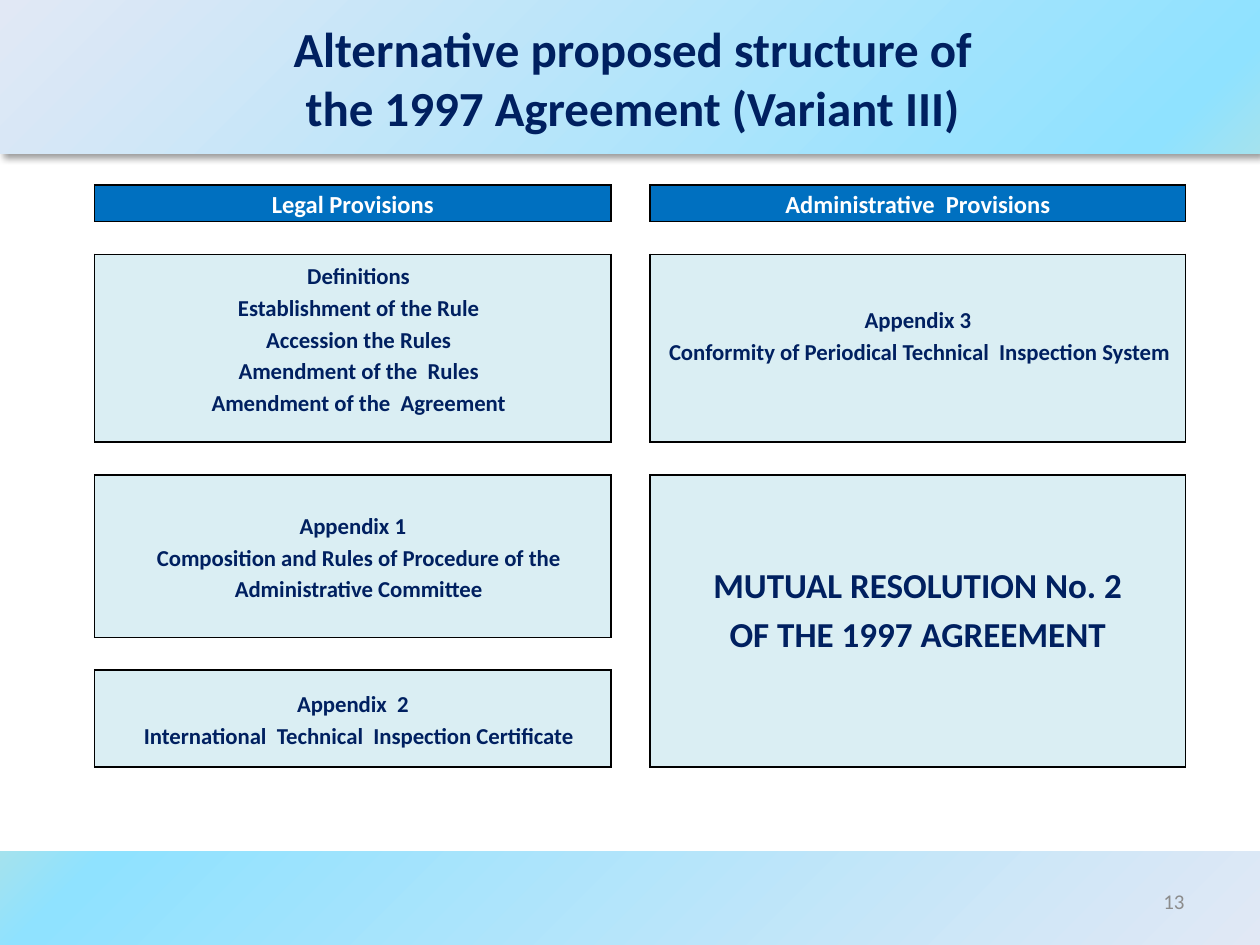
from lxml.etree import SubElement
from pptx import Presentation
from pptx.dml.color import RGBColor
from pptx.enum.shapes import MSO_SHAPE
from pptx.enum.text import MSO_ANCHOR, MSO_AUTO_SIZE, PP_ALIGN
from pptx.oxml import parse_xml
from pptx.oxml.ns import nsdecls, qn
from pptx.util import Emu, Pt

PX = 9144  # 100 px to the inch
NAVY = RGBColor(0x00, 0x20, 0x60)
BLUE = RGBColor(0x00, 0x70, 0xC0)
PALE = RGBColor(0xDA, 0xEE, 0xF3)
WHITE = RGBColor(0xFF, 0xFF, 0xFF)
BLACK = RGBColor(0x00, 0x00, 0x00)
GREY = RGBColor(0x8C, 0x8C, 0x8C)
BAND_STOPS = [(0, RGBColor(0xA4, 0xE2, 0xEE)), (8, RGBColor(0x8F, 0xE2, 0xFF)),
              (100, RGBColor(0xE1, 0xE8, 0xF5))]
NO_STYLE = "{2D5ABB26-0587-4C30-8999-92F81FD0307C}"

COLUMNS = [410, 31, 425]
ROWS = [29, 26, 149, 26, 129, 26, 77, 26]
# row, column, rows spanned, lines, (left margin, indent) after line 1, format
CELLS = [
    (0, 0, 1, ["Legal Provisions"], (0, 0),
     dict(size=14, color=WHITE, fill=BLUE, anchor=MSO_ANCHOR.TOP)),
    (0, 2, 1, ["Administrative  Provisions"], (0, 0),
     dict(size=14, color=WHITE, fill=BLUE, anchor=MSO_ANCHOR.TOP)),
    (2, 0, 1, ["Definitions", "Establishment of the Rule", "Accession the Rules",
               "Amendment of the  Rules", "Amendment of the  Agreement"], (0, 9),
     dict(bottom=16, first=(0, 9))),
    (2, 2, 1, ["Appendix 3", "Conformity of Periodical Technical  Inspection System"],
     (0, 9), dict(bottom=22, rest_align=PP_ALIGN.LEFT)),
    (4, 0, 1, ["Appendix 1", "Composition and Rules of Procedure of the "
               "Administrative Committee"], (9, 0), {}),
    (4, 2, 3, ["MUTUAL RESOLUTION No. 2", "OF THE 1997 AGREEMENT"], (0, 0),
     dict(size=20, bottom=21)),
    (6, 0, 1, ["Appendix  2", "International  Technical  Inspection Certificate"],
     (0, 9), {}),
]


def px(*values):
    return [Emu(v * PX) for v in values]


def write(p, text, size=13, color=NAVY, bold=True, align=PP_ALIGN.CENTER,
          spacing=None, indent=(0, 0)):
    p.alignment = align
    p.line_spacing = spacing
    pPr = p._p.get_or_add_pPr()
    pPr.set("marL", str(indent[0] * PX))
    pPr.set("indent", str(indent[1] * PX))
    p.text = text
    for r in p.runs:
        r.font.name, r.font.size, r.font.bold = "Calibri", Pt(size), bold
        r.font.color.rgb = color


def add_band(s, box, focus, shadow=False):
    """Radial gradient band, whose centre is the corner given by focus."""
    sp = s.shapes.add_shape(MSO_SHAPE.RECTANGLE, *px(*box))
    sp.shadow.inherit = False
    sp.line.fill.background()
    stops = "".join(f'<a:gs pos="{pos * 1000}"><a:srgbClr val="{c}"/></a:gs>'
                    for pos, c in BAND_STOPS)
    rect = " ".join(f'{side}="100000"' for side in focus)
    spPr = sp._element.spPr
    spPr.find(qn("a:prstGeom")).addnext(parse_xml(
        f'<a:gradFill {nsdecls("a")} rotWithShape="1"><a:gsLst>{stops}</a:gsLst>'
        f'<a:path path="circle"><a:fillToRect {rect}/></a:path></a:gradFill>'))
    if shadow:
        spPr.find(qn("a:effectLst")).append(parse_xml(
            f'<a:outerShdw {nsdecls("a")} blurRad="{Pt(4)}" dist="{Pt(3)}" '
            f'dir="2700000" algn="tl" rotWithShape="0"><a:srgbClr val="{BLACK}">'
            '<a:alpha val="40000"/></a:srgbClr></a:outerShdw>'))


def add_title(s, box, lines):
    title = s.shapes.title
    s.shapes._spTree.append(title._element)  # in front of the bands
    title.left, title.top, title.width, title.height = px(*box)
    tf = title.text_frame
    tf.auto_size, tf.word_wrap = MSO_AUTO_SIZE.NONE, True
    tf.vertical_anchor = MSO_ANCHOR.MIDDLE
    tf.margin_right, = px(24)
    write(tf.paragraphs[0], "\v".join(lines), size=28)


def set_borders(cell):
    tcPr = cell._tc.get_or_add_tcPr()
    for side in "LRTB":
        tcPr.append(parse_xml(
            f'<a:ln{side} {nsdecls("a")} w="{Pt(1)}"><a:solidFill>'
            f'<a:srgbClr val="{BLACK}"/></a:solidFill></a:ln{side}>'))


def clear_cell(cell):
    cell.margin_left = cell.margin_right = cell.margin_top = cell.margin_bottom = 0
    # small mark, so that the gap rows keep their height
    SubElement(cell.text_frame.paragraphs[0]._p, qn("a:endParaRPr"), sz="800")


def fill_cell(cell, lines, indent, fill=PALE, anchor=MSO_ANCHOR.MIDDLE, bottom=0,
              first=(0, 0), rest_align=PP_ALIGN.CENTER, **fmt):
    cell.margin_left, cell.margin_right, cell.margin_bottom = px(6, 6, bottom)
    cell.vertical_anchor = anchor
    cell.fill.solid()
    cell.fill.fore_color.rgb = fill
    tf = cell.text_frame
    for i, line in enumerate(lines):
        p = tf.add_paragraph() if i else tf.paragraphs[0]
        write(p, line, spacing=1.15, indent=indent if i else first,
              align=rest_align if i else PP_ALIGN.CENTER, **fmt)


def add_structure(s, left, top):
    frame = s.shapes.add_table(len(ROWS), len(COLUMNS),
                               *px(left, top, sum(COLUMNS), sum(ROWS)))
    table = frame.table
    table.first_row = table.horz_banding = False
    table._tbl.tblPr.find(qn("a:tableStyleId")).text = NO_STYLE
    for col, width in zip(table.columns, COLUMNS):
        col.width, = px(width)
    for row, height in zip(table.rows, ROWS):
        row.height, = px(height)
    for cell in table.iter_cells():
        clear_cell(cell)
    for row, col, span, lines, indent, fmt in CELLS:
        for i in range(span):
            set_borders(table.cell(row + i, col))
        cell = table.cell(row, col)
        if span > 1:
            cell.merge(table.cell(row + span - 1, col))
        fill_cell(cell, lines, indent, **fmt)


def add_page_number(s, box, number):
    tf = s.shapes.add_textbox(*px(*box)).text_frame
    tf.word_wrap = True
    tf.vertical_anchor = MSO_ANCHOR.MIDDLE
    write(tf.paragraphs[0], number, size=12, color=GREY, bold=False,
          align=PP_ALIGN.RIGHT)


def main():
    prs = Presentation()
    prs.slide_width, prs.slide_height = px(1000, 750)
    s = prs.slides.add_slide(prs.slide_layouts[5])
    # Header and footer bands
    add_band(s, (0, 0, 1000, 122), "lt", shadow=True)
    add_band(s, (0, 676, 1000, 76), "rb")
    # Content
    add_title(s, (59, 22, 900, 79), ["Alternative proposed structure of",
                                     "the 1997 Agreement (Variant III)"])
    add_structure(s, 75, 147)
    add_page_number(s, (717, 695, 233, 40), "13")
    prs.save("out.pptx")


if __name__ == "__main__":
    main()
